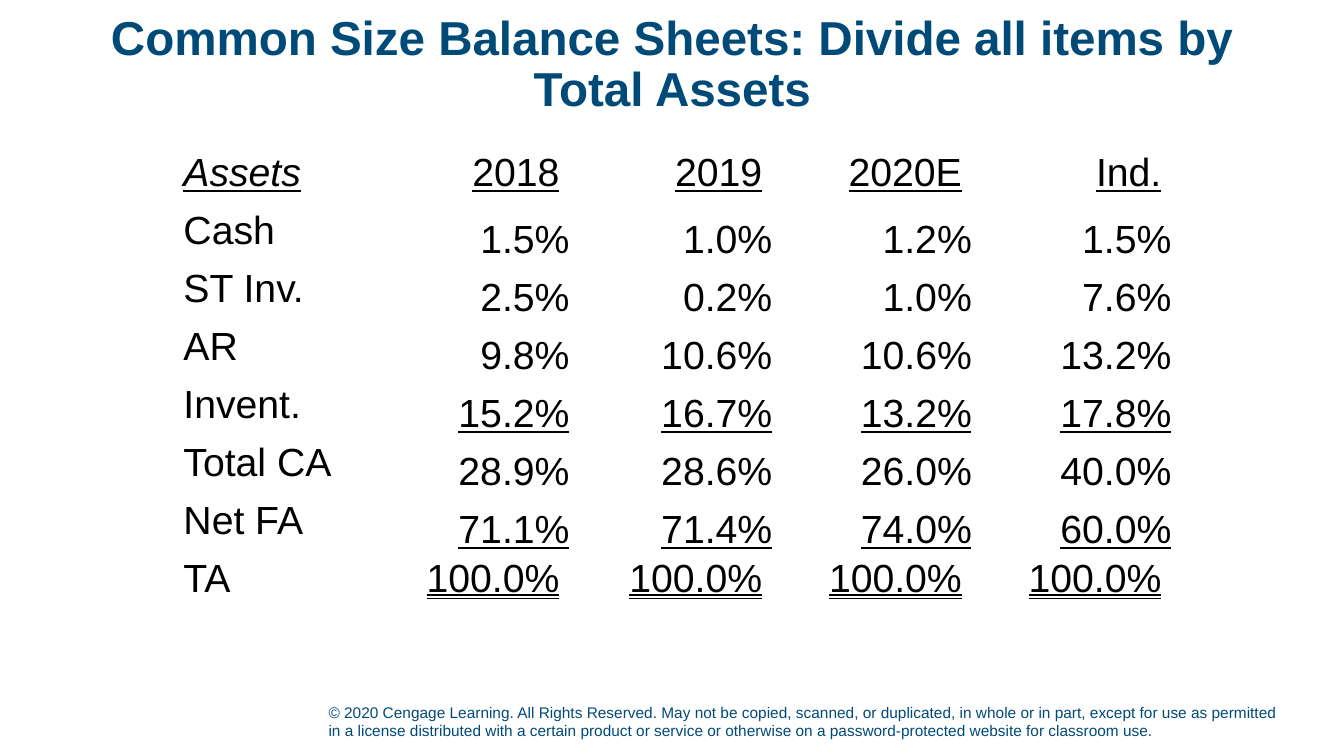
from pptx import Presentation
from pptx.dml.color import RGBColor
from pptx.enum.text import MSO_ANCHOR, MSO_UNDERLINE, PP_ALIGN
from pptx.util import Cm, Pt

NAVY, BLACK = "004A78", "000000"
TITLE = "Common Size Balance Sheets: Divide all items by Total Assets"
COPYRIGHT = (
    "© 2020 Cengage Learning. All Rights Reserved. May not be copied, scanned, or "
    "duplicated, in whole or in part, except for use as permitted in a license "
    "distributed with a certain product or service or otherwise on a "
    "password-protected website for classroom use."
)
BALANCE_SHEET = [
    ("Assets", "2018", "2019", "2020E", "Ind."),
    ("Cash", "1.5%", "1.0%", "1.2%", "1.5%"),
    ("ST Inv.", "2.5%", "0.2%", "1.0%", "7.6%"),
    ("AR", "9.8%", "10.6%", "10.6%", "13.2%"),
    ("Invent.", "15.2%", "16.7%", "13.2%", "17.8%"),
    ("Total CA", "28.9%", "28.6%", "26.0%", "40.0%"),
    ("Net FA", "71.1%", "71.4%", "74.0%", "60.0%"),
    ("TA", "100.0%", "100.0%", "100.0%", "100.0%"),
]
COLUMN_WIDTHS = (5.03, 4.95, 5.11, 5.03, 5.03)
ROW_HEIGHT = 1.46
UNDERLINES = {"Invent.": True, "Net FA": True, "TA": MSO_UNDERLINE.DOUBLE_LINE}


def color(value):
    return RGBColor.from_string(value)


def apply_format(target, values):
    for name, value in values.items():
        setattr(target, name, value)


class SlideBuilder:
    def __init__(self, page, font_name):
        self.page = page
        self.font_name = font_name

    def add_text(self, frame, text, size, ink, align=PP_ALIGN.LEFT, spacing=None,
                 **font):
        para = frame.paragraphs[0]
        apply_format(para, {"alignment": align, "line_spacing": spacing})
        span = para.add_run()
        span.text = text
        apply_format(span.font, {"name": self.font_name, "size": Pt(size), **font})
        span.font.color.rgb = color(ink)

    def text_box(self, bounds, anchor, text, size, ink, **style):
        box = self.page.shapes.add_textbox(*map(Cm, bounds))
        frame = box.text_frame
        apply_format(frame, {"word_wrap": True, "vertical_anchor": anchor})
        self.add_text(frame, text, size, ink, **style)

    def balance_table(self, left, top, rows):
        grid = self.page.shapes.add_table(
            len(rows), len(COLUMN_WIDTHS), Cm(left), Cm(top),
            Cm(sum(COLUMN_WIDTHS)), Cm(ROW_HEIGHT * len(rows))).table
        apply_format(grid, {"first_row": False, "horz_banding": False})
        for column, width in zip(grid.columns, COLUMN_WIDTHS):
            column.width = Cm(width)
        for index, values in enumerate(rows):
            grid.rows[index].height = Cm(ROW_HEIGHT)
            inner_row = 0 < index < len(rows) - 1
            for position, text in enumerate(values):
                self.balance_cell(grid.cell(index, position), text, values[0],
                                  position > 0, inner_row)

    def balance_cell(self, cell, text, item, is_figure, inner_row):
        """Inner figures sit at the bottom right with no margins."""
        cell.fill.background()
        if is_figure and inner_row:
            apply_format(cell, {
                "vertical_anchor": MSO_ANCHOR.BOTTOM, "margin_left": 0,
                "margin_right": 0, "margin_top": 0, "margin_bottom": 0})
        is_heading = item == "Assets"
        underline = is_heading or (is_figure and UNDERLINES.get(item, False))
        self.add_text(cell.text_frame, text, 28, BLACK,
                      align=PP_ALIGN.RIGHT if is_figure else PP_ALIGN.LEFT,
                      italic=is_heading and not is_figure, underline=underline)


def main():
    deck = Presentation()
    apply_format(deck, {"slide_width": Cm(33.87), "slide_height": Cm(19.05)})
    builder = SlideBuilder(deck.slides.add_slide(deck.slide_layouts[6]), "Arial")
    builder.text_box((8.03, 17.5, 24.46, 1.27), MSO_ANCHOR.BOTTOM, COPYRIGHT, 11, NAVY)
    builder.text_box((2.34, 0.38, 29.21, 2.54), MSO_ANCHOR.MIDDLE, TITLE, 34, NAVY,
                     align=PP_ALIGN.CENTER, spacing=0.9, bold=True)
    builder.balance_table(4.37, 3.68, BALANCE_SHEET)
    deck.save("out.pptx")


if __name__ == "__main__":
    main()
